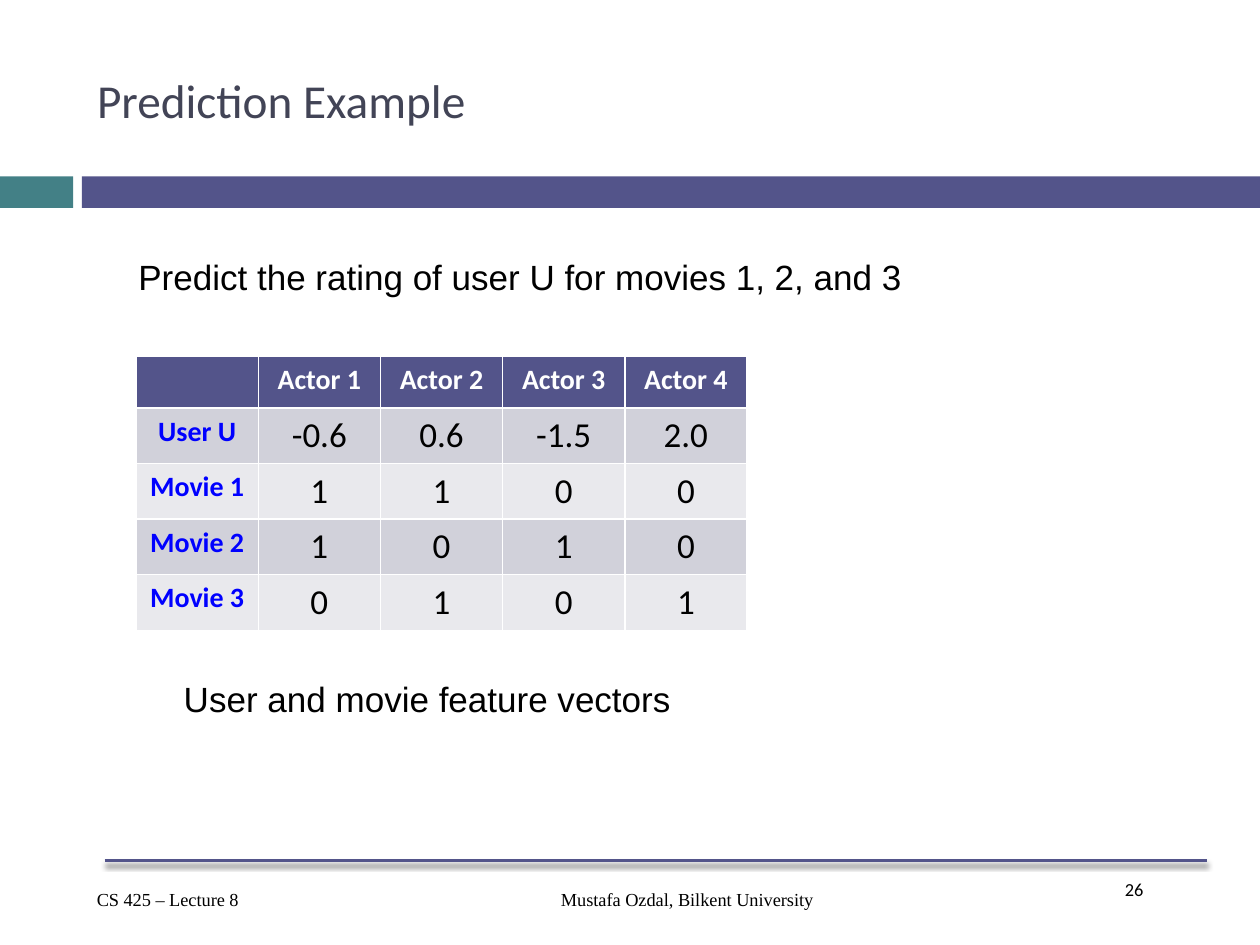
"""Build the prediction example slide with its feature vector table."""
from lxml import etree
from pptx import Presentation, util as u
from pptx.dml.color import RGBColor
from pptx.enum import shapes, text
from pptx.oxml import parse_xml
from pptx.oxml.ns import nsdecls

INDIGO, TEAL, BLACK, WHITE, BLUE = "53548A", "438086", "000000", "FFFFFF", "0000FF"
BANDS = ["D1D1DA", "E9E9ED"]
TITLE = "Prediction Example"
BARS = [(0, 0.58, TEAL), (0.65, 9.35, INDIGO)]
FEATURES = [
    ["", "Actor 1", "Actor 2", "Actor 3", "Actor 4"],
    ["User U", "-0.6", "0.6", "-1.5", "2.0"],
    ["Movie 1", "1", "1", "0", "0"],
    ["Movie 2", "1", "0", "1", "0"],
    ["Movie 3", "0", "1", "0", "1"],
]
LEFT, CENTER = text.PP_ALIGN.LEFT, text.PP_ALIGN.CENTER
LABELS = [
    ("26", (8.83, 6.92, 0.75, 0.5), 10.5, "Calibri", LEFT, True),
    ("CS 425 – Lecture 8", (0.67, 7, 1.83, 0.28), 10.5, "Times New Roman", LEFT, True),
    ("Mustafa Ozdal, Bilkent University", (2.58, 7, 5.75, 0.34), 10.5,
     "Times New Roman", CENTER, True),
    ("User and movie feature vectors", (1.36, 5.33, 4.09, 0.44), 20, "Arial", LEFT, False),
    ("Predict the rating of user U for movies 1, 2, and 3", (1, 1.98, 6.3, 0.44), 20,
     "Arial", LEFT, False),
]
TABLE_LEFT, TABLE_TOP, COLUMN, ROW = 1.08, 2.83, 0.97, 0.41


def inches(*lengths):
    return [u.Inches(length) for length in lengths]


def paint(fill, color):
    fill.solid()
    fill.fore_color.rgb = RGBColor.from_string(color)


def write(frame, words, size, face, color, align=LEFT, bold=False):
    frame.text = words
    paragraph = frame.paragraphs[0]
    paragraph.alignment = align
    font = paragraph.font
    font.size, font.name, font.bold = u.Pt(size), face, bold
    font.color.rgb = RGBColor.from_string(color)


def add_bars(slide):
    for left, width, color in BARS:
        bar = slide.shapes.add_shape(shapes.MSO_SHAPE.RECTANGLE, *inches(left, 1.4, width, 0.25))
        bar.shadow.inherit = False
        paint(bar.fill, color)
        bar.line.fill.background()


def add_footer_rule(slide):
    rule = slide.shapes.add_connector(shapes.MSO_CONNECTOR.STRAIGHT,
                                      *inches(0.83, 6.83, 9.58, 6.83))
    rule.line.width = u.Pt(1.5)
    rule.line.color.rgb = RGBColor.from_string(INDIGO)
    effects = parse_xml(f"<a:effectLst {nsdecls('a')}/>")
    shadow = etree.SubElement(effects, effects.tag.replace("effectLst", "outerShdw"),
                              blurRad=str(u.Pt(3)), dist=str(u.Pt(2.4)), dir="5400000")
    color = etree.SubElement(shadow, effects.tag.replace("effectLst", "srgbClr"), val=BLACK)
    etree.SubElement(color, effects.tag.replace("effectLst", "alpha"), val="45000")
    rule.element.spPr.append(effects)


def add_features(slide):
    rows, columns = len(FEATURES), len(FEATURES[0])
    table = slide.shapes.add_table(rows, columns, *inches(
        TABLE_LEFT, TABLE_TOP, COLUMN * columns, ROW * rows)).table
    for r, values in enumerate(FEATURES):
        for c, value in enumerate(values):
            cell = table.cell(r, c)
            heading = r == 0 or c == 0
            paint(cell.fill, BANDS[(r - 1) % 2] if r else INDIGO)
            color = WHITE if r == 0 else BLUE if c == 0 else BLACK
            write(cell.text_frame, value, 16 if heading else 20, "Calibri", color,
                  CENTER, heading)


def main():
    deck = Presentation()
    deck.slide_width, deck.slide_height = inches(10, 7.5)
    slide = deck.slides.add_slide(deck.slide_layouts[5])
    add_bars(slide)
    add_footer_rule(slide)
    title = slide.shapes.title
    title.left, title.top, title.width, title.height = inches(0.67, 0.25, 8.92, 1.08)
    write(title.text_frame, TITLE, 27, "Calibri", "424456")
    title.text_frame.vertical_anchor = text.MSO_ANCHOR.MIDDLE
    add_features(slide)
    for words, place, size, face, align, wrap in LABELS:
        label = slide.shapes.add_textbox(*inches(*place)).text_frame
        label.word_wrap = wrap
        write(label, words, size, face, BLACK, align)
    deck.save("out.pptx")


if __name__ == "__main__":
    main()
